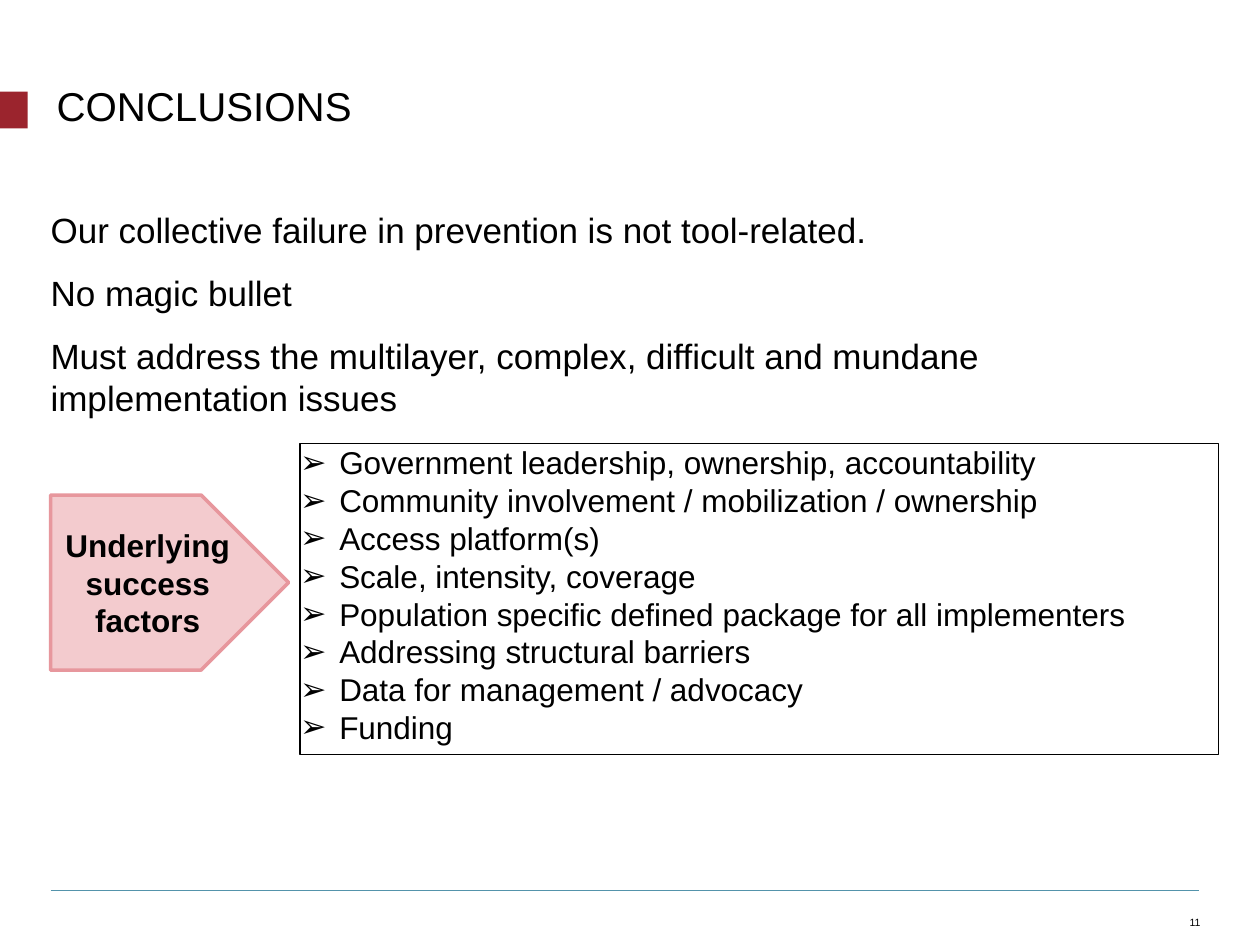
from lxml.etree import SubElement
from pptx import Presentation
from pptx.dml.color import RGBColor
from pptx.enum.shapes import MSO_CONNECTOR, MSO_SHAPE
from pptx.enum.text import MSO_ANCHOR, PP_ALIGN
from pptx.oxml.ns import qn
from pptx.util import Cm, Pt

TITLE = "CONCLUSIONS"
MESSAGES = [
    "Our collective failure in prevention is not tool-related.",
    "No magic bullet",
    "Must address the multilayer, complex, difficult and mundane implementation issues",
]
ARROW_LABEL = "Underlying success factors"
FACTORS = [
    "Government leadership, ownership, accountability",
    "Community involvement / mobilization / ownership",
    "Access platform(s)",
    "Scale, intensity, coverage",
    "Population specific defined package for all implementers",
    "Addressing structural barriers",
    "Data for management / advocacy",
    "Funding",
]
PAGE_NUMBER = "11"

FONT = "Arial"
BLACK = RGBColor(0x00, 0x00, 0x00)
RED = RGBColor(0x9B, 0x24, 0x2D)
PINK = RGBColor(0xF3, 0xCB, 0xCE)
ROSE = RGBColor(0xE7, 0x97, 0x9D)
BLUE = RGBColor(0x53, 0x93, 0xAB)

LEFT = 1.02
CONTENT_WIDTH = 23.16
RULE_TOP = 17.96
BULLET_INDENT = Cm(0.79)


def add_box(slide, geometry, box, fill=None, line=None, line_width=0):
    shape = slide.shapes.add_shape(geometry, *map(Cm, box))
    shape.shadow.inherit = False
    if fill is None:
        shape.fill.background()
    else:
        shape.fill.solid()
        shape.fill.fore_color.rgb = fill
    if line is None:
        shape.line.fill.background()
    else:
        shape.line.color.rgb = line
        shape.line.width = Pt(line_width)
    return shape


def write(shape, lines, size, bold=False, inset=0, frame_format=None, **paragraph_format):
    frame = shape.text_frame
    frame_values = {
        "word_wrap": True, "vertical_anchor": MSO_ANCHOR.TOP,
        "margin_left": Cm(inset), "margin_right": Cm(inset),
        "margin_top": Cm(inset), "margin_bottom": Cm(inset),
    } | (frame_format or {})
    for name, value in frame_values.items():
        setattr(frame, name, value)

    paragraph_values = {"alignment": PP_ALIGN.LEFT, "line_spacing": 1.0} | paragraph_format
    font_values = {"name": FONT, "size": Pt(size), "bold": bold}
    for index, line in enumerate(lines):
        paragraph = frame.add_paragraph() if index else frame.paragraphs[0]
        for name, value in paragraph_values.items():
            setattr(paragraph, name, value)
        run = paragraph.add_run()
        run.text = line
        for name, value in font_values.items():
            setattr(run.font, name, value)
        run.font.color.rgb = BLACK


def add_text(slide, box, lines, size, **options):
    write(slide.shapes.add_textbox(*map(Cm, box)), lines, size, **options)


def add_bullets(shape, character):
    for paragraph in shape.text_frame.paragraphs:
        properties = paragraph._p.get_or_add_pPr()
        properties.set("marL", str(BULLET_INDENT))
        properties.set("indent", str(-BULLET_INDENT))
        SubElement(properties, qn("a:buFont"), typeface=FONT)
        SubElement(properties, qn("a:buChar"), char=character)


def add_rule(slide, left, top, width):
    rule = slide.shapes.add_connector(
        MSO_CONNECTOR.STRAIGHT, Cm(left), Cm(top), Cm(left + width), Cm(top))
    rule.line.color.rgb = BLUE
    rule.line.width = Pt(0.5)
    SubElement(rule._element.spPr, qn("a:effectLst"))


def main():
    presentation = Presentation()
    presentation.slide_width = Cm(25.4)
    presentation.slide_height = Cm(19.05)
    slide = presentation.slides.add_slide(presentation.slide_layouts[6])

    add_box(slide, MSO_SHAPE.RECTANGLE, (0, 1.85, 0.56, 0.74), fill=RED)
    add_rule(slide, LEFT, RULE_TOP, CONTENT_WIDTH)
    add_text(slide, (LEFT, 2.92, CONTENT_WIDTH, 15.49), MESSAGES, 20,
             frame_format={"margin_top": Cm(1.28)}, space_before=Pt(12))
    add_text(slide, (23.67, 18.14, 0.53, 0.58), [PAGE_NUMBER], 6,
             frame_format={"vertical_anchor": MSO_ANCHOR.BOTTOM},
             alignment=PP_ALIGN.RIGHT)
    add_text(slide, (1.14, 1.8, CONTENT_WIDTH, 1.45), [TITLE], 23, line_spacing=Pt(23))

    arrow = add_box(slide, MSO_SHAPE.PENTAGON, (LEFT, 9.98, 4.8, 3.53), PINK, ROSE, 2)
    write(arrow, [ARROW_LABEL], 18, bold=True, inset=0.25,
          frame_format={"vertical_anchor": MSO_ANCHOR.MIDDLE},
          alignment=PP_ALIGN.CENTER)

    factor_box = add_box(slide, MSO_SHAPE.RECTANGLE, (6.05, 8.94, 18.52, 6.27),
                         line=BLACK, line_width=0.75)
    write(factor_box, FACTORS, 18)
    add_bullets(factor_box, "➢")

    presentation.save("out.pptx")


if __name__ == "__main__":
    main()
